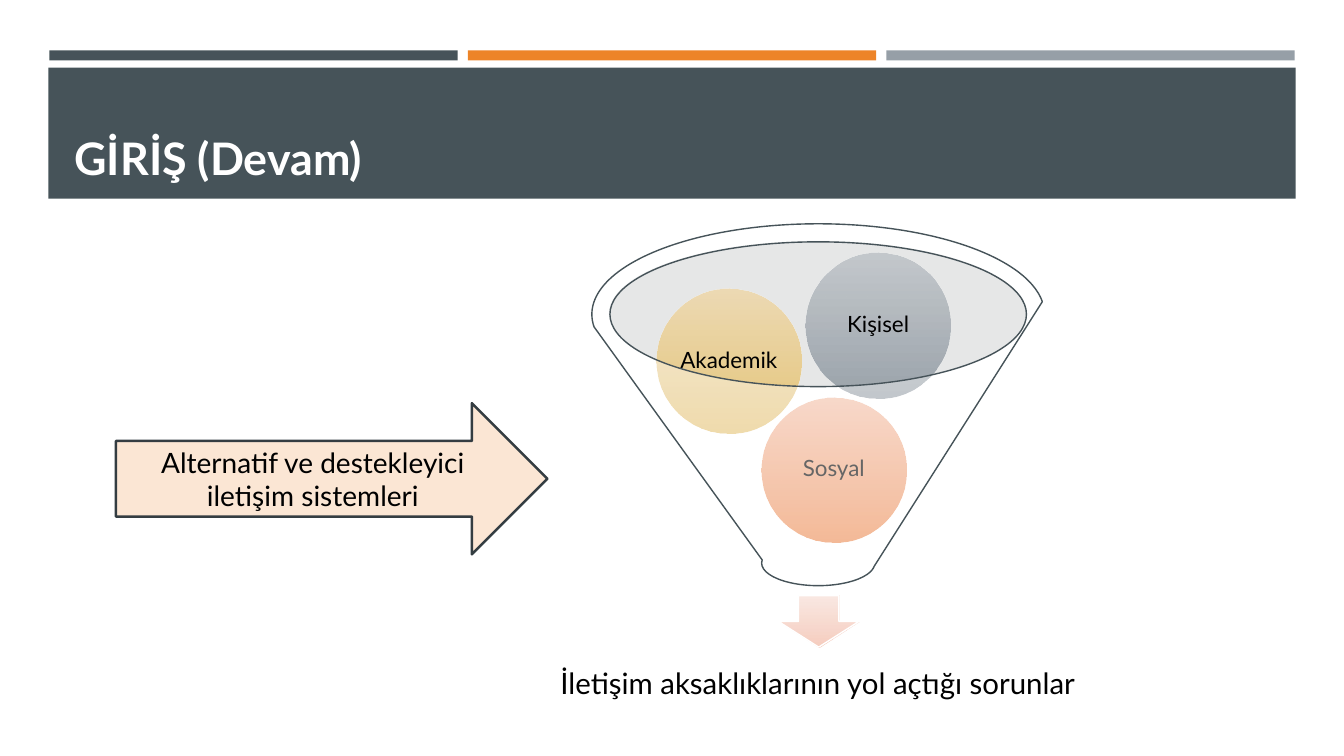
from pptx import Presentation
from pptx.dml.color import RGBColor
from pptx.enum.shapes import MSO_SHAPE
from pptx.enum.text import MSO_ANCHOR, PP_ALIGN
from pptx.oxml.ns import qn
from pptx.util import Inches, Pt
from lxml import etree

RECT, OVAL, FUNNEL = MSO_SHAPE.RECTANGLE, MSO_SHAPE.OVAL, MSO_SHAPE.FUNNEL
DOWN, RIGHT = MSO_SHAPE.DOWN_ARROW, MSO_SHAPE.RIGHT_ARROW
MIDDLE, BOTTOM = MSO_ANCHOR.MIDDLE, MSO_ANCHOR.BOTTOM
LEFT, CENTER = PP_ALIGN.LEFT, PP_ALIGN.CENTER

HUES = {
    "slate": "465359", "orange": "ED8428", "grey": "969FA7",
    "white": "FFFFFF", "black": "000000", "mouth": "C1C3C4",
    "cream": "FBE6D4", "edge": "343D42",
    "blush": "FAE6DF", "rose": "F6CDBF",
    "peach": "F3B89D", "coral": "ED8C53",
    "sand": "EED9AE", "gold": "E6C476",
    "mist": "C0C5C9", "steel": "9BA3AB",
}

deck = Presentation()
deck.slide_width, deck.slide_height = Inches(13.33), Inches(7.5)
slide = deck.slides.add_slide(deck.slide_layouts[6])


def draw(kind, box, fill, line=None, width=1, alpha=100):
    shape = slide.shapes.add_shape(kind, *map(Inches, box))
    shape.shadow.inherit = False
    if isinstance(fill, tuple):
        shape.fill.gradient()
        shape.fill.gradient_angle = 270
        for stop, hue in zip(shape.fill.gradient_stops, fill):
            stop.color.rgb = RGBColor.from_string(HUES[hue])
    else:
        shape.fill.solid()
        shape.fill.fore_color.rgb = RGBColor.from_string(HUES[fill])
    if alpha < 100:
        tone = next(shape._element.spPr.iter(qn("a:srgbClr")))
        etree.SubElement(tone, qn("a:alpha"), val=str(alpha * 1000))
    if line:
        shape.line.color.rgb = RGBColor.from_string(HUES[line])
        shape.line.width = Pt(width)
    else:
        shape.line.fill.background()
    return shape


def write(shape, text, size, hue="black", bold=False, align=CENTER,
          anchor=MIDDLE, wrap=True, inset=(0.1, 0.05), space=1.0):
    frame = shape.text_frame
    across, down = map(Inches, inset)
    form = {"word_wrap": wrap, "vertical_anchor": anchor,
            "margin_left": across, "margin_right": across,
            "margin_top": down, "margin_bottom": down}
    for name, value in form.items():
        setattr(frame, name, value)
    para = frame.paragraphs[0]
    para.alignment, para.line_spacing = align, space
    run = para.add_run()
    run.text = text
    for name, value in {"name": "Lato", "size": Pt(size), "bold": bold}.items():
        setattr(run.font, name, value)
    run.font.color.rgb = RGBColor.from_string(HUES[hue])


for i, hue in enumerate(["slate", "orange", "grey"]):
    draw(RECT, (0.49 + i * 4.15, 0.5, 4.05, 0.1), hue)
draw(RECT, (0.48, 0.67, 12.37, 1.3), "slate")
title = slide.shapes.add_textbox(*map(Inches, (0.64, 0.77, 12.06, 1.11)))
write(title, "GİRİŞ (Devam)", 32, "white", True, LEFT, BOTTOM)

draw(OVAL, (6.04, 2.39, 4.14, 1.44), "mouth", alpha=40)
draw(DOWN, (7.72, 5.91, 0.8, 0.51), ("blush", "rose"), "white", alpha=90)
result = slide.shapes.add_textbox(*map(Inches, (5.29, 6.32, 5.64, 0.96)))
write(result, "İletişim aksaklıklarının yol açtığı sorunlar", 21,
      inset=(0.16, 0.16), space=0.9)

balls = [
    ("Sosyal", 7.55, 3.94, ("peach", "coral")),
    ("Akademik", 6.51, 2.86, ("sand", "gold")),
    ("Kişisel", 7.99, 2.51, ("mist", "steel")),
]
for text, left, top, fade in balls:
    ball = draw(OVAL, (left, top, 1.44, 1.44), fade, alpha=90)
    write(ball, text, 16, wrap=False, inset=(0.02, 0.02), space=0.9)
draw(FUNNEL, (5.87, 2.22, 4.49, 3.59), "white", "slate", alpha=40)

arrow = draw(RIGHT, (1.15, 4, 4.28, 1.5), "cream", "edge", 1.75)
write(arrow, "Alternatif ve destekleyici iletişim sistemleri", 20)

deck.save("out.pptx")
